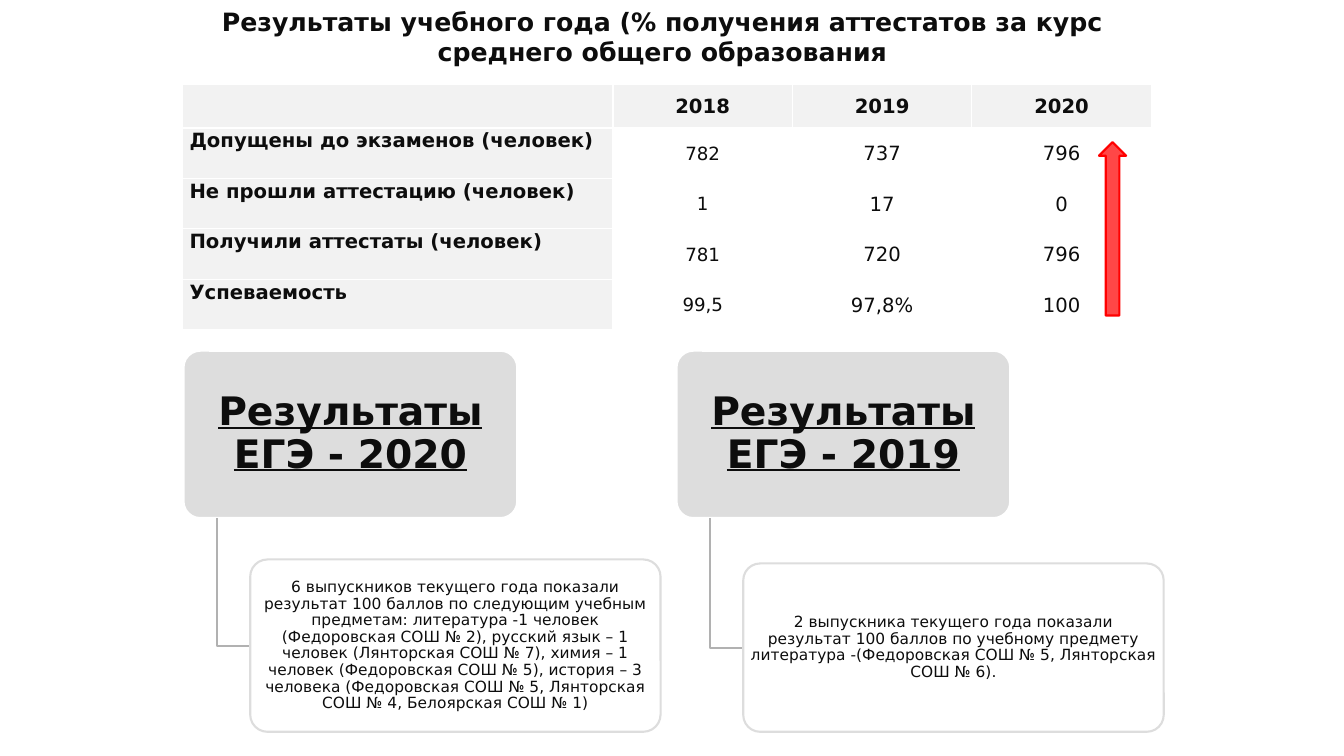
from dataclasses import dataclass

from pptx import Presentation
from pptx.dml.color import RGBColor as Rgb
from pptx.enum.shapes import MSO_SHAPE as Form
from pptx.enum.text import MSO_ANCHOR as Anchor, PP_ALIGN as Align
from pptx.oxml import parse_xml
from pptx.oxml.ns import nsdecls
from pptx.util import Inches, Pt


@dataclass(frozen=True)
class Theme:
    """Colours, font and type sizes of the slide."""
    font: str = "DejaVu Sans"
    ink: str = "0D0D0D"
    white: str = "FFFFFF"
    pale: str = "F2F2F2"
    grey: str = "DDDDDD"
    wire: str = "B1B1B1"
    red: str = "FF4747"
    edge: str = "FF0000"
    title: int = 18
    head: int = 28
    note: int = 11
    cell: int = 14
    small: int = 13
    line: float = 1.5


def assign(item, values):
    """Set each named value on the item."""
    for name, value in values.items():
        setattr(item, name, value)


class Board:
    """Draws styled elements on one slide."""

    def __init__(self, slide, theme):
        """Keep the slide and its theme."""
        self.slide = slide
        self.theme = theme

    def label(self, frame, text, size, align=Align.CENTER, gap=1.0, **font):
        """Fill a text frame with one styled paragraph."""
        para = frame.paragraphs[0]
        assign(para, {"alignment": align, "line_spacing": gap})
        run = para.add_run()
        run.text = text
        assign(run.font, {"name": self.theme.font, "size": Pt(size), **font})
        run.font.color.rgb = Rgb.from_string(self.theme.ink)

    def title(self, box, text):
        """Add the bold slide title."""
        frame = self.slide.shapes.add_textbox(*map(Inches, box)).text_frame
        frame.word_wrap = True
        self.label(frame, text, self.theme.title, bold=True)

    def paint(self, shape, fill, line):
        """Give a shape its fill and outline."""
        shape.shadow.inherit = False
        if fill:
            shape.fill.solid()
            shape.fill.fore_color.rgb = Rgb.from_string(fill)
        else:
            shape.fill.background()
        shape.line.color.rgb = Rgb.from_string(line)
        shape.line.width = Pt(self.theme.line)

    def shape(self, form, box, fill, line):
        """Add a painted preset shape."""
        shape = self.slide.shapes.add_shape(form, *map(Inches, box))
        self.paint(shape, fill, line)
        return shape

    def card(self, box, fill, line, text, size, pads, alpha=100, **font):
        """Add a rounded card with centred text."""
        card = self.shape(Form.ROUNDED_RECTANGLE, box, fill, line)
        card.adjustments[0] = 0.1
        if alpha < 100:
            tint = card.element.spPr.find("{*}solidFill/{*}srgbClr")
            tint.append(parse_xml(f'<a:alpha {nsdecls("a")} val="{alpha * 1000}"/>'))
        side, top = map(Inches, pads)
        frame = card.text_frame
        assign(frame, {"word_wrap": True, "vertical_anchor": Anchor.MIDDLE,
                       "margin_left": side, "margin_right": side,
                       "margin_top": top, "margin_bottom": top})
        self.label(frame, text, size, gap=0.9, **font)

    def elbow(self, x, y, end, low):
        """Draw an open corner line from a header to its note."""
        route = self.slide.shapes.build_freeform(Inches(x), Inches(y))
        points = [(Inches(x), Inches(low)), (Inches(end), Inches(low))]
        route.add_line_segments(points, close=False)
        self.paint(route.convert_to_shape(), None, self.theme.wire)

    def table(self, box, cols, tall, rows):
        """Add the table with shaded header row and label column."""
        look = self.theme
        table = self.slide.shapes.add_table(
            len(rows), len(cols), *map(Inches, box)).table
        table.horz_banding = False
        for col, wide in zip(table.columns, cols):
            col.width = Inches(wide)
        for r, (row, high) in enumerate(zip(rows, tall)):
            table.rows[r].height = Inches(high)
            for c, text in enumerate(row):
                cell = table.cell(r, c)
                first = c == 0
                shade = first or r == 0
                assign(cell, {"margin_left": Inches(0.07), "margin_right": Inches(0.07),
                              "margin_top": 0, "margin_bottom": 0,
                              "vertical_anchor": Anchor.TOP if first else Anchor.MIDDLE})
                cell.fill.solid()
                cell.fill.fore_color.rgb = Rgb.from_string(look.pale if shade else look.white)
                if text:
                    size = look.small if c == 1 and r else look.cell
                    self.label(cell.text_frame, text, size,
                               Align.LEFT if first else Align.CENTER, 1.07, bold=shade)


TITLE = "Результаты учебного года (% получения аттестатов за курс среднего общего образования"
ROWS = [
    ("", "2018", "2019", "2020"),
    ("Допущены до экзаменов (человек)", "782", "737", "796"),
    ("Не прошли аттестацию (человек)", "1", "17", "0"),
    ("Получили аттестаты (человек)", "781", "720", "796"),
    ("Успеваемость", "99,5", "97,8%", "100"),
]
EXAMS = [
    (1.82, "2020", 5.55, 4.07,
     "6 выпускников текущего года показали результат 100 баллов по следующим учебным "
     "предметам: литература -1 человек (Федоровская СОШ № 2), русский язык – 1 человек "
     "(Лянторская СОШ № 7), химия – 1 человек (Федоровская СОШ № 5), история – 3 человека "
     "(Федоровская СОШ № 5, Лянторская СОШ № 4, Белоярская СОШ № 1)"),
    (6.71, "2019", 5.59, 4.17,
     "2 выпускника текущего года показали результат 100 баллов по учебному предмету "
     "литература -(Федоровская СОШ № 5, Лянторская СОШ № 6)."),
]


def main():
    """Build and save the slide."""
    deck = Presentation()
    assign(deck, {"slide_width": Inches(13.33), "slide_height": Inches(7.5)})
    look = Theme()
    board = Board(deck.slides.add_slide(deck.slide_layouts[6]), look)
    board.table((1.81, 0.84, 9.61, 2.42), [4.27] + [1.78] * 3, [0.43] + [0.5] * 4, ROWS)
    board.title((1.62, 0.01, 9.9, 0.71), TITLE)
    top, wide, high, base = 3.48, 3.31, 1.66, 7.26
    for left, year, y, span, text in EXAMS:
        board.card((left, top, wide, high), look.grey, look.white,
                   f"Результаты ЕГЭ - {year}", look.head, (0.06, 0.04),
                   bold=True, underline=True)
        stem, note = left + wide * 0.1, left + wide * 0.2
        board.elbow(stem, top + high, note, (y + base) / 2)
        board.card((note, y, span, base - y), look.white, look.grey,
                   text, look.note, (0.02, 0.02), alpha=90)
    board.shape(Form.UP_ARROW, (10.9, 1.41, 0.27, 1.72), look.red, look.edge)
    deck.save("out.pptx")


if __name__ == "__main__":
    main()
